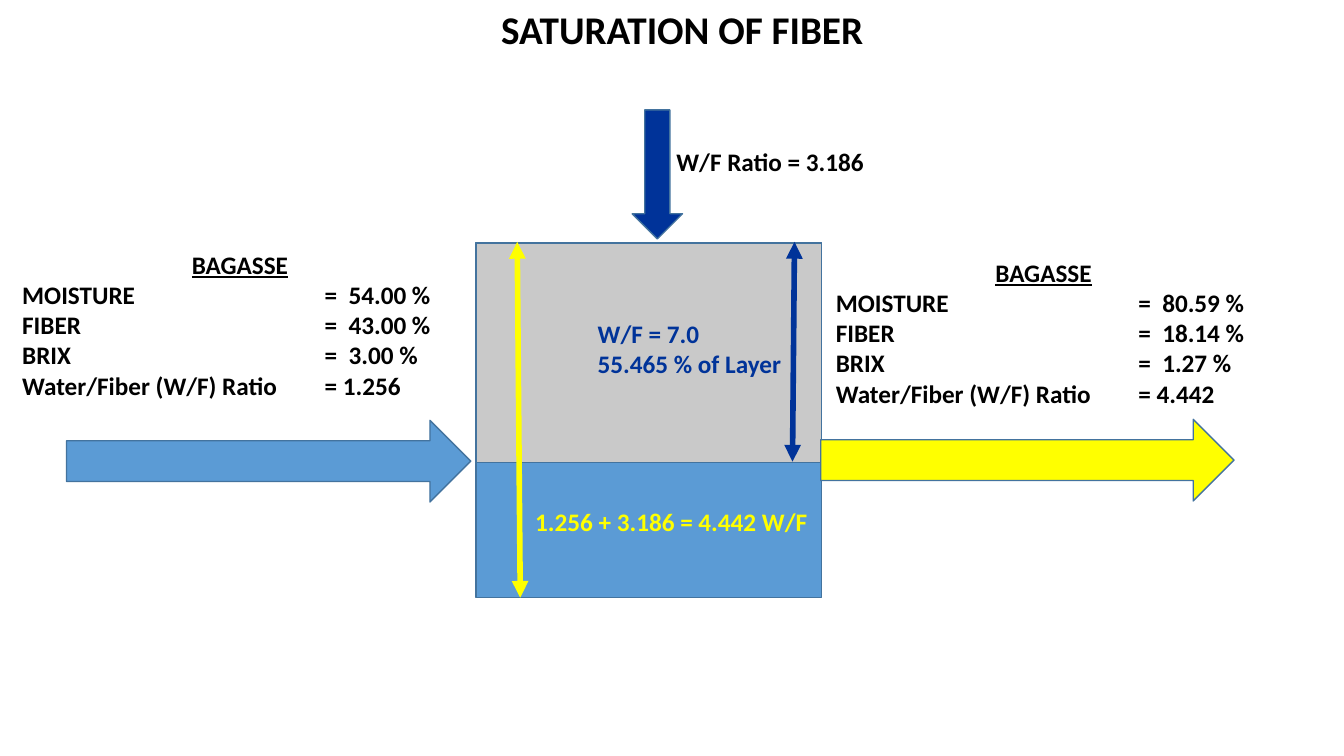
import pptx
import pptx.dml.color
import pptx.enum.shapes
import pptx.enum.text
import pptx.oxml
import pptx.oxml.ns
import pptx.util

Inches = pptx.util.Inches
Pt = pptx.util.Pt
SHAPE = pptx.enum.shapes.MSO_SHAPE
ALIGN = pptx.enum.text.PP_ALIGN
NAMESPACE = pptx.oxml.ns.nsdecls("a")
COLOURS = {
    "black": "000000", "navy": "003399", "blue": "5B9BD5",
    "outline": "43739E", "yellow": "FFFF00", "grey": "C9C9C9",
}


def colour(name):
    return pptx.dml.color.RGBColor.from_string(COLOURS[name])


def write(box, text, size=18, ink="black", centred_heading=False):
    """Fill a box with bold lines; a centred heading is the underlined first line."""
    frame = box.text_frame
    frame.word_wrap = True
    frame.auto_size = pptx.enum.text.MSO_AUTO_SIZE.NONE
    frame.vertical_anchor = pptx.enum.text.MSO_ANCHOR.TOP
    for index, line in enumerate(text.split("\n")):
        para = frame.paragraphs[0] if index == 0 else frame.add_paragraph()
        heading = centred_heading and index == 0
        para.alignment = ALIGN.CENTER if heading else ALIGN.LEFT
        para.space_before = Pt(0)
        span = para.add_run()
        span.text = line
        span.font.name = "Calibri"
        span.font.size = Pt(size)
        span.font.bold = True
        span.font.underline = heading
        span.font.color.rgb = colour(ink)


deck = pptx.Presentation()
deck.slide_width, deck.slide_height = Inches(13.33), Inches(7.5)
page = deck.slides.add_slide(deck.slide_layouts.get_by_name("Two Content"))
title, feed_list, exit_list = page.placeholders

# Title
title.left, title.top, title.width, title.height = (
    Inches(4.13), Inches(0), Inches(5.27), Inches(0.57))
write(title, "SATURATION OF FIBER", size=28)
title.text_frame.paragraphs[0].alignment = ALIGN.CENTER

# Bagasse composition before and after the layer, values on a 3 inch tab
bagasse_lists = [
    (feed_list, 0.12, 2.42, 4.52, ["=  54.00 %", "=  43.00 %", "=  3.00 %", "= 1.256"]),
    (exit_list, 8.19, 2.5, 4.32, ["=  80.59 %", "=  18.14 %", "=  1.27 %", "= 4.442"]),
]
properties = ["MOISTURE", "FIBER", "BRIX", "Water/Fiber (W/F) Ratio"]
for box, left, top, width, values in bagasse_lists:
    box.left, box.top, box.width, box.height = (
        Inches(left), Inches(top), Inches(width), Inches(1.91))
    rows = [f"{name}\t{value}" for name, value in zip(properties, values)]
    write(box, "\n".join(["BAGASSE"] + rows), centred_heading=True)
    for para in box.text_frame.paragraphs:
        settings = para._p.get_or_add_pPr()
        settings.set("marL", "0")
        settings.set("indent", "0")
        settings.set("defTabSz", str(int(Inches(3))))
        settings.append(pptx.oxml.parse_xml(f"<a:buNone {NAMESPACE}/>"))

# Fiber layer, its dry part, and the flows in and out
blocks = [
    (SHAPE.RECTANGLE, 4.72, 2.41, 3.43, 3.52, "blue"),
    (SHAPE.RECTANGLE, 4.72, 2.41, 3.43, 2.18, "grey"),
    (SHAPE.RIGHT_ARROW, 0.66, 4.17, 4.01, 0.81, "blue"),
    (SHAPE.DOWN_ARROW, 6.27, 1.09, 0.5, 1.28, "navy"),
    (SHAPE.RIGHT_ARROW, 8.14, 4.16, 4.1, 0.81, "yellow"),
]
for kind, left, top, width, height, fill in blocks:
    block = page.shapes.add_shape(
        kind, Inches(left), Inches(top), Inches(width), Inches(height))
    block.shadow.inherit = False
    block.fill.solid()
    block.fill.fore_color.rgb = colour(fill)
    block.line.color.rgb = colour("outline")
    block.line.width = Pt(1)

# Height markers
markers = [(7.88, 2.4, 7.86, 4.58, "navy"), (5.13, 2.4, 5.16, 5.93, "yellow")]
for start_x, start_y, end_x, end_y, ink in markers:
    marker = page.shapes.add_connector(
        pptx.enum.shapes.MSO_CONNECTOR.STRAIGHT,
        Inches(start_x), Inches(start_y), Inches(end_x), Inches(end_y))
    marker.line.color.rgb = colour(ink)
    marker.line.width = Pt(4)
    outline = marker.line._get_or_add_ln()
    for end in ("headEnd", "tailEnd"):
        outline.append(pptx.oxml.parse_xml(f'<a:{end} {NAMESPACE} type="triangle"/>'))
    marker._element.spPr.append(pptx.oxml.parse_xml(f"<a:effectLst {NAMESPACE}/>"))

# Water/fiber labels
labels = [
    ("W/F Ratio = 3.186", 6.61, 1.4, 2.79, 0.4, "black"),
    ("1.256 + 3.186 = 4.442 W/F", 5.21, 4.97, 2.94, 0.4, "yellow"),
    ("W/F = 7.0\n55.465 % of Layer", 5.83, 3.11, 2.06, 0.71, "navy"),
]
for text, left, top, width, height, ink in labels:
    label = page.shapes.add_textbox(
        Inches(left), Inches(top), Inches(width), Inches(height))
    write(label, text, ink=ink)

deck.save("out.pptx")
